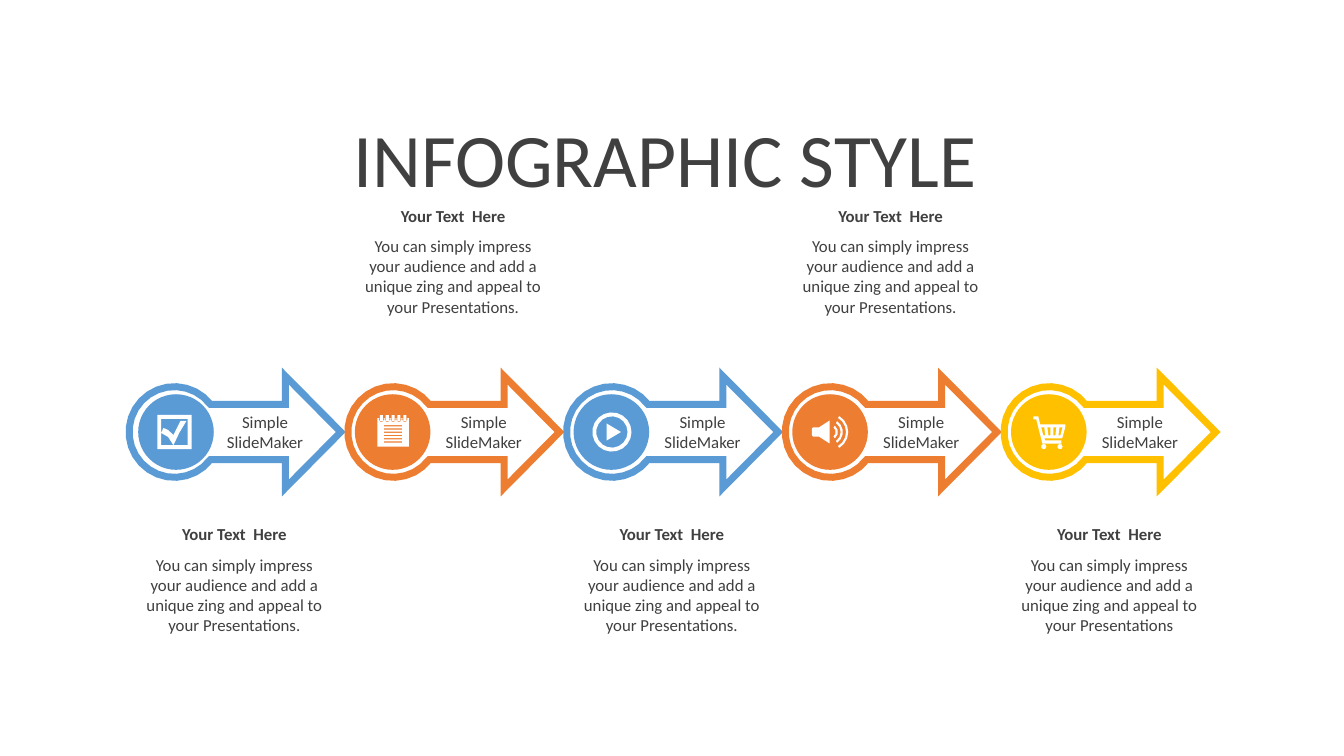
from math import asin, cos, degrees, radians, sin, sqrt

from lxml.etree import SubElement
from pptx import Presentation
from pptx.dml.color import RGBColor
from pptx.enum.shapes import MSO_SHAPE
from pptx.enum.text import MSO_ANCHOR, PP_ALIGN
from pptx.oxml.ns import qn
from pptx.util import Pt

BLUE = RGBColor(0x5B, 0x9B, 0xD5)
ORANGE = RGBColor(0xED, 0x7D, 0x31)
YELLOW = RGBColor(0xFF, 0xC0, 0x00)
WHITE = RGBColor(0xFF, 0xFF, 0xFF)
GREY = RGBColor(0x40, 0x40, 0x40)
FONT = "Calibri"

TITLE = "INFOGRAPHIC STYLE"
LABEL = "Simple SlideMaker"
HEADING = "Your Text  Here"
BODY = ("You can simply impress your audience and add a unique zing "
        "and appeal to your Presentations")
# icon, colour, closing mark of the body text, disc offset from the arrow's left end
STEPS = [
    ("check", BLUE, ".", 6.5),
    ("notepad", ORANGE, ".", 5),
    ("play", BLUE, ".", 5),
    ("speaker", ORANGE, ".", 5),
    ("cart", YELLOW, "", 5),
]

FIRST_LEFT, PITCH, MIDDLE = 92.2, 156.24, 308.6
RING, NECK, DISC = 32.4, 19.8, 54
NOTCH, TIP, HEAD = 111.6, 151.2, 40
CAPTION_TOPS = (370.8, 143.3)  # below the arrow, above the arrow


def arc(x, y, radius, start=0, end=360):
    """Points along a circular arc; angles run clockwise from the right."""
    count = max(3, round(sqrt(radius) * abs(end - start) / 72))
    angles = [radians(start + (end - start) * i / count) for i in range(count + 1)]
    return [(x + radius * cos(a), y + radius * sin(a)) for a in angles]


def rectangle(left, top, right, bottom):
    return [(left, top), (right, top), (right, bottom), (left, bottom)]


def wave(inner, outer, spread):
    return (arc(-0.7, 0, outer, -spread, spread)
            + arc(-0.7, 0, inner, spread, -spread))


def notepad():
    contours = [rectangle(-11.2, -9.8, 11.2, 10.4)]
    for row in range(6):
        top = -4.8 + 2.3 * row
        contours.append(rectangle(-6.5, top, 6.5, top + 0.9))
    for column in range(5):
        x = -8.4 + 4.2 * column
        contours.append([(x - 1.8, -9.8), *arc(x, -8.7, 1.8, 180, 0), (x + 1.8, -9.8)])
        contours.append(rectangle(x - 1.1, -12, x + 1.1, -7.7))
    return contours


def cart():
    frame = [(-11.5, -11.2), (-7.9, -11.2), (-6.5, -5.5), (11.5, -5.5), (11.5, -4),
             (9.4, 3.9), (8.6, 4.6), (-3.6, 4.6), (-2.9, 6), (8.6, 6), (8.6, 8.2),
             (-5, 8.2), (-9.4, -9.1), (-11.5, -9.1)]
    slots = [(-5.8, -3.6, -2.9, -4.3), (-1.4, 0.7, 0.7, -0.7),
             (2.9, 5, 4.3, 2.9), (7.2, 9.4, 7.9, 6.5)]
    wheels = [arc(x, 10.4, 1.9) for x in (-4, 7.6)]
    return [frame, *wheels] + [list(zip(slot, (-3.3, -3.3, 2.4, 2.4))) for slot in slots]


ICONS = {
    "check": [
        rectangle(-12.2, -12.2, 12.2, 12.2),
        rectangle(-9.4, -9.4, 9.4, 9.4),
        [(-9.4, 0.7), (-7.9, -2.9), (-4.5, -1.5), (-0.7, 2.2), (4.3, -7.9),
         (8.6, -7.9), (3.5, 0.5), (-0.7, 9.4), (-4.5, 3.5)],
    ],
    "notepad": notepad(),
    "play": [arc(0, 0, 14), arc(0, 0, 11.2), [(-3.8, -6.1), (6.5, 0), (-3.8, 6.1)]],
    "speaker": [
        [(-0.7, -8.2), (-0.7, 8.2), (-8.3, 3.3), (-12.5, 3.3), (-13.4, 2.4),
         (-13.4, -2.4), (-12.5, -3.3), (-8.3, -3.3)],
        wave(4.3, 5.9, 50), wave(7.9, 9.4, 55), wave(11.7, 13.3, 59),
    ],
    "cart": cart(),
}


def add_outline(page, contours, x, y, fill):
    """Draw closed contours, given relative to x, y, as one filled shape."""
    placed = [[(Pt(x + dx), Pt(y + dy)) for dx, dy in contour] for contour in contours]
    builder = page.shapes.build_freeform(*placed[0][0])
    for number, contour in enumerate(placed):
        if number:
            builder.move_to(*contour[0])
        builder.add_line_segments(contour[1:], close=True)
    shape = builder.convert_to_shape()
    shape.shadow.inherit = False
    shape.fill.solid()
    shape.fill.fore_color.rgb = fill
    shape.line.fill.background()
    return shape


def format_text(frame, text, size, bold=False):
    frame.text = text
    frame.word_wrap = True
    para = frame.paragraphs[0]
    para.alignment = PP_ALIGN.CENTER
    font = para.runs[0].font
    font.name, font.size, font.bold = FONT, Pt(size), bold
    font.color.rgb = GREY


def add_text(page, text, left, top, width, height, bold=False, anchor=MSO_ANCHOR.TOP):
    box = page.shapes.add_textbox(Pt(left), Pt(top), Pt(width), Pt(height))
    box.text_frame.vertical_anchor = anchor
    format_text(box.text_frame, text, 12, bold)


def add_arrow(page, left, color):
    angle = degrees(asin(NECK / RING))
    contour = [(NOTCH, -HEAD), (TIP, 0), (NOTCH, HEAD), (NOTCH, NECK),
               *arc(RING, 0, RING, angle, 360 - angle), (NOTCH, -NECK)]
    arrow = add_outline(page, [contour], left, MIDDLE, WHITE)
    arrow.line.color.rgb = color
    arrow.line.width = Pt(5)
    line = arrow.element.spPr.find(qn("a:ln"))
    SubElement(line, qn("a:miter"), lim="800000")


def add_disc(page, left, color):
    disc = page.shapes.add_shape(MSO_SHAPE.OVAL, Pt(left), Pt(MIDDLE - DISC / 2),
                                 Pt(DISC), Pt(DISC))
    disc.shadow.inherit = False
    disc.fill.solid()
    disc.fill.fore_color.rgb = color
    disc.line.fill.background()


def main():
    deck = Presentation()
    deck.slide_width, deck.slide_height = Pt(960), Pt(540)
    page = deck.slides.add_slide(deck.slide_layouts[5])

    title = page.shapes.title
    title.left, title.top, title.width, title.height = Pt(19.4), Pt(84.2), Pt(911.5), Pt(57)
    title.text_frame.vertical_anchor = MSO_ANCHOR.MIDDLE
    format_text(title.text_frame, TITLE, 54)

    for number, (icon, color, mark, disc_offset) in enumerate(STEPS):
        left = FIRST_LEFT + PITCH * number
        add_arrow(page, left, color)
        add_disc(page, left + disc_offset, color)
        add_outline(page, ICONS[icon], left + RING, MIDDLE, WHITE)
        add_text(page, LABEL, left + 59, MIDDLE - 18, 76.3, 36, anchor=MSO_ANCHOR.MIDDLE)
        top = CAPTION_TOPS[number % 2]
        add_text(page, HEADING, left + 3.6, top, 143.3, 21.6, bold=True)
        add_text(page, BODY + mark, left + 3.6, top + 21.6, 143.3, 80)

    deck.save("out.pptx")


if __name__ == "__main__":
    main()
